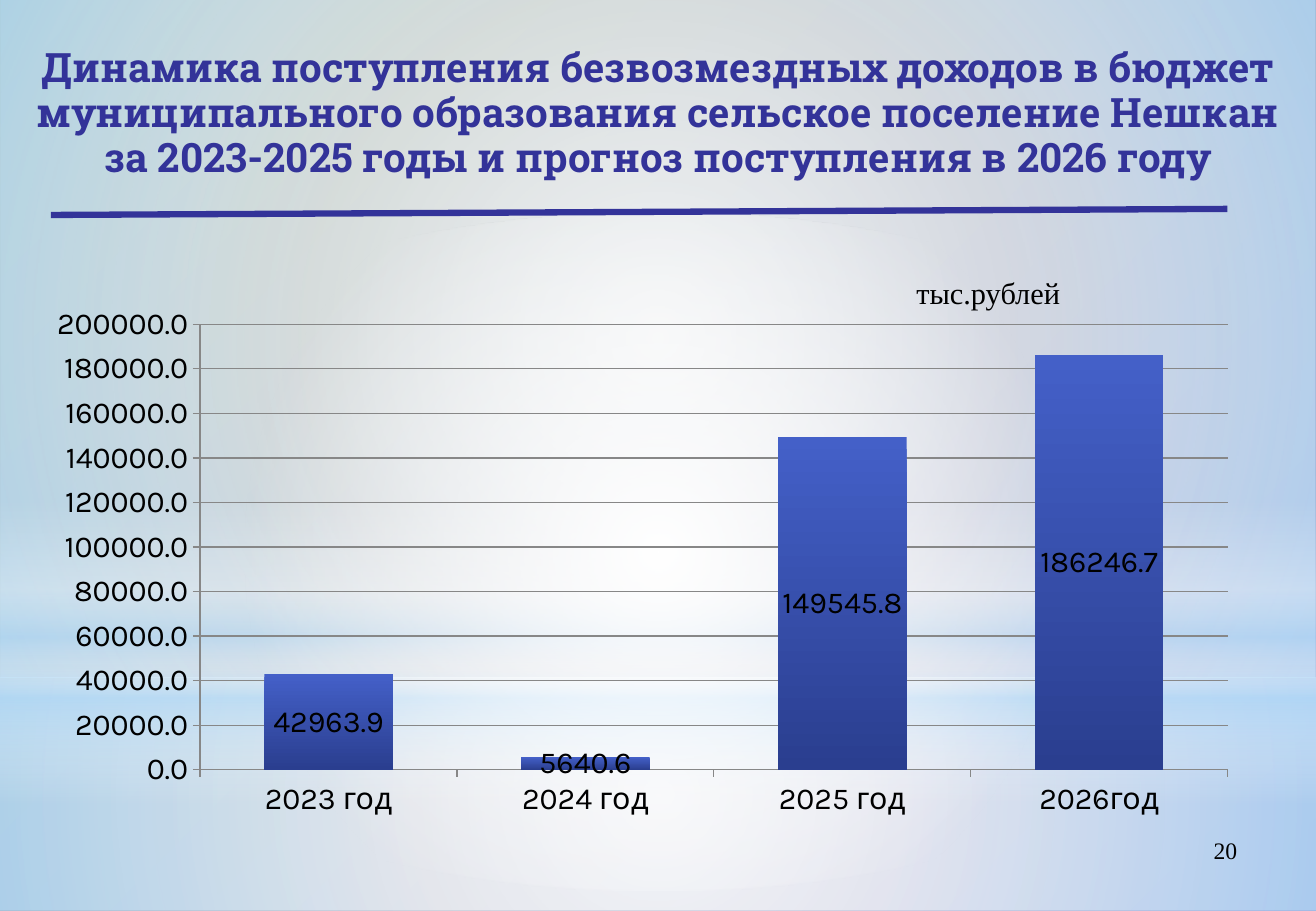
from lxml import etree
from pptx import Presentation
from pptx import util as u
from pptx.chart.data import CategoryChartData
from pptx.dml.color import RGBColor
from pptx.enum import chart as charts, shapes, text
from pptx.oxml import parse_xml
from pptx.oxml.ns import nsdecls, qn

WIDTH, HEIGHT = 10.84, 7.5
TITLE = ("Динамика поступления безвозмездных доходов в бюджет "
         "муниципального образования сельское поселение Нешкан "
         "за 2023-2025 годы и прогноз поступления в 2026 году")
UNIT = "тыс.рублей"
PAGE = "20"
INCOME = {"2023 год": 42963.9, "2024 год": 5640.6,
          "2025 год": 149545.8, "2026год": 186246.7}
COLORS = {"title": "333399", "text": "000000", "white": "FFFFFF", "sky": "B4DCFA",
          "green": "96AB94", "violet": "8488C4", "grid": "878787",
          "bar_top": "4460C8", "bar_bottom": "2A3E8F"}
SERIF = "Times New Roman"
PLOT = {"x": 0.12, "y": 0.061, "w": 0.863, "h": 0.83}

# Gradient stops: position %, colour, opacity %; an angle of None means circular
BACKDROP = [(0, "green", 100), (100, "violet", 100)]
BARS = [(0, "bar_top", 100), (100, "bar_bottom", 100)]
GLOWS = [
    ("RECTANGLE", 5.58, 1.92, None,
     [(0, "white", 91), (37, "white", 76), (100, "sky", 79)]),
    ("RECTANGLE", 0, 5.58, None,
     [(0, "white", 89), (48, "white", 62), (100, "sky", 79)]),
    ("RECTANGLE", 4.12, 2.5, 90,
     [(0, "white", 0), (29, "white", 30), (45, "sky", 40),
      (55, "white", 26), (65, "sky", 60), (100, "white", 0)]),
    ("OVAL", 1.75, 5.58, None, [(0, "white", 100), (56, "white", 0)]),
]


def rgb(name):
    return RGBColor.from_string(COLORS[name])


def set_gradient(fill, properties, stops, angle):
    """Swap the solid fill inside properties for a gradient with opacity."""
    fill.solid()
    fill.fore_color.rgb = rgb("white")
    stop_xml = "".join(
        f'<a:gs pos="{position * 1000}"><a:srgbClr val="{COLORS[color]}">'
        f'<a:alpha val="{opacity * 1000}"/></a:srgbClr></a:gs>'
        for position, color, opacity in stops)
    if angle is None:
        direction = ('<a:path path="circle"><a:fillToRect l="50000" t="50000" '
                     'r="50000" b="50000"/></a:path>')
    else:
        direction = f'<a:lin ang="{angle * 60000}" scaled="0"/>'
    gradient = parse_xml(f'<a:gradFill {nsdecls("a")} rotWithShape="1">'
                         f'<a:gsLst>{stop_xml}</a:gsLst>{direction}</a:gradFill>')
    solid = properties.find(qn("a:solidFill"))
    properties.replace(solid, gradient)


def add_text(slide, box, content, size, font, color="text", bold=False,
             align=text.PP_ALIGN.LEFT, wrap=True):
    shape = slide.shapes.add_textbox(*map(u.Inches, box))
    frame = shape.text_frame
    frame.word_wrap = wrap
    paragraph = frame.paragraphs[0]
    paragraph.alignment = align
    run = paragraph.add_run()
    run.text = content
    run.font.size = u.Pt(size)
    run.font.name = font
    run.font.bold = bold
    run.font.color.rgb = rgb(color)
    return frame


def add_background(slide):
    fill = slide.background.fill
    fill.solid()
    properties = slide.element.find(".//" + qn("p:bgPr"))
    set_gradient(fill, properties, BACKDROP, 45)
    for kind, top, height, angle, stops in GLOWS:
        shape = slide.shapes.add_shape(
            shapes.MSO_SHAPE[kind], 0, u.Inches(top), u.Inches(WIDTH), u.Inches(height))
        shape.shadow.inherit = False
        shape.line.fill.background()
        set_gradient(shape.fill, shape.element.spPr, stops, angle)


def add_rule(slide):
    rule = slide.shapes.add_connector(
        shapes.MSO_CONNECTOR.STRAIGHT, *map(u.Inches, (0.42, 1.77, 10.11, 1.72)))
    rule.line.color.rgb = rgb("title")
    rule.line.width = u.Pt(3.75)
    etree.SubElement(rule.element.spPr, qn("a:effectLst"))


def set_plot_layout(chart):
    area = chart.element.find(".//" + qn("c:plotArea"))
    for old in area.findall(qn("c:layout")):
        area.remove(old)
    places = "".join(f'<c:{key} val="{share}"/>' for key, share in PLOT.items())
    area.insert(0, parse_xml(
        f'<c:layout {nsdecls("c")}><c:manualLayout><c:layoutTarget val="inner"/>'
        f'<c:xMode val="edge"/><c:yMode val="edge"/>{places}'
        '</c:manualLayout></c:layout>'))


def add_income_chart(slide):
    data = CategoryChartData(number_format="0.0")
    data.categories = list(INCOME)
    data.add_series("Series 1", list(INCOME.values()))
    chart = slide.shapes.add_chart(
        charts.XL_CHART_TYPE.COLUMN_STACKED,
        *map(u.Inches, (0.47, 2.4, 9.81, 4.42)), data).chart
    chart.has_legend = False
    chart.has_title = False
    chart.font.size = u.Pt(18)
    chart.font.name = "Karla"
    chart.font.color.rgb = rgb("text")
    set_plot_layout(chart)

    values = chart.value_axis
    values.minimum_scale, values.maximum_scale, values.major_unit = 0, 200000, 20000
    values.tick_labels.number_format = "0.0"
    values.tick_labels.number_format_is_linked = False
    values.has_major_gridlines = True
    for axis in (chart.category_axis, values):
        axis.major_tick_mark = charts.XL_TICK_MARK.OUTSIDE
        axis.minor_tick_mark = charts.XL_TICK_MARK.NONE
    for part in (chart.category_axis, values, values.major_gridlines):
        part.format.line.color.rgb = rgb("grid")
        part.format.line.width = u.Pt(0.75)

    plot = chart.plots[0]
    plot.vary_by_categories = False
    plot.gap_width, plot.overlap = 100, 100
    plot.has_data_labels = True
    labels = plot.data_labels
    labels.show_value = True
    labels.number_format = "0.0"
    labels.number_format_is_linked = False
    labels.position = charts.XL_LABEL_POSITION.CENTER
    series = plot.series[0]
    fill = series.format.fill
    fill.solid()
    set_gradient(fill, series._element.find(qn("c:spPr")), BARS, 90)


def main():
    presentation = Presentation()
    presentation.slide_width = u.Inches(WIDTH)
    presentation.slide_height = u.Inches(HEIGHT)
    slide = presentation.slides.add_slide(presentation.slide_layouts[6])
    add_background(slide)
    add_text(slide, (7.76, 6.83, 2.53, 0.52), PAGE, 14, SERIF,
             align=text.PP_ALIGN.RIGHT)
    title = add_text(slide, (0, 0.4, WIDTH, 1.08), TITLE, 24, "Roboto Slab", "title",
                     bold=True, align=text.PP_ALIGN.CENTER)
    title.vertical_anchor = text.MSO_ANCHOR.MIDDLE
    title.paragraphs[0].line_spacing = 0.92
    add_rule(slide)
    add_income_chart(slide)
    add_text(slide, (7.45, 2.21, 1.4, 0.4), UNIT, 18, SERIF, wrap=False)
    presentation.save("out.pptx")


if __name__ == "__main__":
    main()
